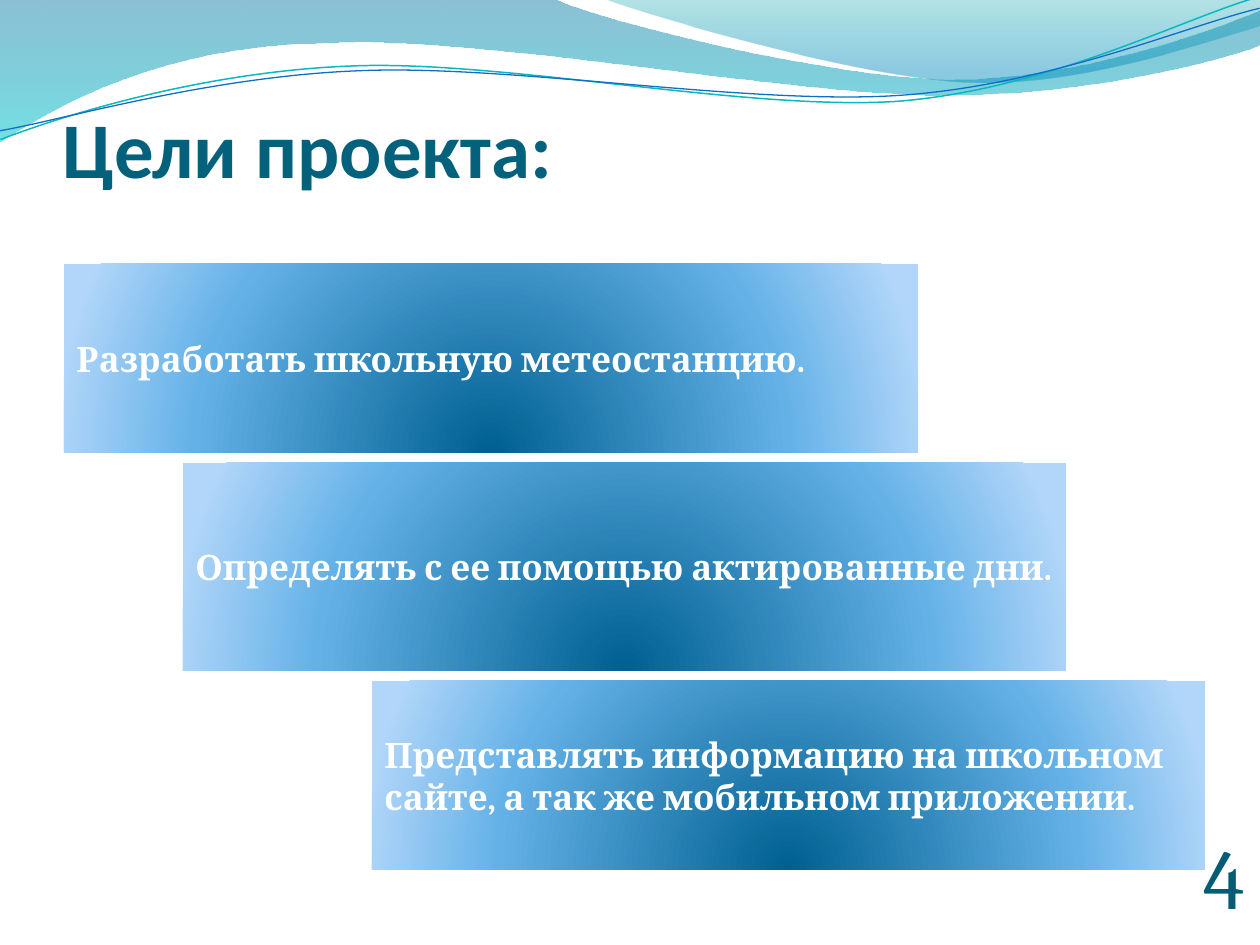
from dataclasses import dataclass
from typing import Optional

from lxml.etree import SubElement
from pptx import Presentation
from pptx.dml.color import RGBColor
from pptx.enum.shapes import MSO_SHAPE
from pptx.enum.text import MSO_ANCHOR, PP_ALIGN
from pptx.oxml.ns import qn
from pptx.util import Pt

PIXEL = 914400 / 126
LINE_TILT = -2.7
COLORS = {
    "title": "04617B", "number": "045D75", "text": "FFFFFF",
    "wave_top": "0074A1", "wave_bottom": "00C6CF",
    "crest_top": "00A1A9", "crest_bottom": "008BBF",
    "teal_line": "0AB8BF", "blue_line": "0F6FC6",
    "goal_core": "006091", "goal_middle": "64B1E7", "goal_edge": "B1D6F9",
}


@dataclass(frozen=True)
class Stop:
    """A gradient stop with position and opacity in percent."""
    position: int
    color: str
    opacity: int = 100


@dataclass(frozen=True)
class Curve:
    """An outline whose two-value steps are lines and six-value steps Bézier curves."""
    start: tuple[int, int]
    steps: tuple[tuple[int, ...], ...]
    stops: tuple[Stop, ...] = ()
    line: Optional[str] = None
    line_width: float = 0


@dataclass(frozen=True)
class Box:
    """A text and its rectangle in px."""
    text: str
    left: int
    top: int
    width: int
    height: int


@dataclass(frozen=True)
class Style:
    """The look of one text."""
    font: str
    size: int
    color: str
    bold: bool = True
    anchor: MSO_ANCHOR = MSO_ANCHOR.BOTTOM
    align: PP_ALIGN = PP_ALIGN.LEFT


CURVES = (
    Curve((0, 0), (
        (554, -1), (600, 21, 837, 79, 955, 79), (1075, 79, 1207, 33, 1260, 11),
        (1261, 45), (1239, 55, 1096, 96, 940, 95), (784, 95, 481, 35, 324, 43),
        (163, 45, 58, 105, -1, 142), (0, 0),
    ), (Stop(0, "wave_top", 45), Stop(100, "wave_bottom", 55))),
    Curve((604, -1), (
        (641, 14, 859, 78, 969, 82), (1079, 87, 1211, 40, 1260, 26), (1260, 0), (604, -1),
    ), (Stop(0, "crest_top", 30), Stop(80, "crest_bottom", 45))),
    Curve((-2, 110), (
        (58, 90, 199, 52, 350, 53), (499, 53, 745, 117, 896, 114),
        (1048, 109, 1184, 45, 1260, 27),
    ), line="teal_line", line_width=0.85),
    Curve((-2, 101), (
        (57, 94, 207, 57, 357, 58), (509, 58, 750, 112, 902, 108),
        (1052, 104, 1188, 52, 1262, 38),
    ), line="blue_line", line_width=0.75),
)
GOAL_STOPS = (Stop(0, "goal_core"), Stop(68, "goal_middle"), Stop(100, "goal_edge"))
GOALS = (
    Box("Разработать школьную метеостанцию.", 64, 264, 854, 189),
    Box("Определять с ее помощью актированные дни.", 183, 463, 883, 208),
    Box("Представлять информацию на школьном сайте, а так же мобильном приложении.",
        372, 681, 833, 189),
)
TITLE = Box("Цели проекта:", 63, 96, 1134, 98)
NUMBER = Box("4", 1140, 876, 105, 50)
GOAL_STYLE = Style("Cambria", 20, "text", anchor=MSO_ANCHOR.MIDDLE)
TITLE_STYLE = Style("Calibri", 45, "title")
NUMBER_STYLE = Style("Cambria", 48, "number", bold=False, align=PP_ALIGN.RIGHT)


def px(value: int) -> int:
    """Turn px into EMU."""
    return round(value * PIXEL)


def rgb(name: str) -> RGBColor:
    """Look up a named colour."""
    return RGBColor.from_string(COLORS[name])


def fill_gradient(shape, stops: tuple[Stop, ...], radial: bool = False) -> None:
    """Fill a shape with a vertical or radial gradient."""
    shape.fill.gradient()
    gradient = shape._element.spPr.find(qn("a:gradFill"))
    for child in list(gradient):
        gradient.remove(child)
    stop_list = SubElement(gradient, qn("a:gsLst"))
    for stop in stops:
        element = SubElement(stop_list, qn("a:gs"), pos=str(stop.position * 1000))
        color = SubElement(element, qn("a:srgbClr"), val=COLORS[stop.color])
        if stop.opacity < 100:
            SubElement(color, qn("a:alpha"), val=str(stop.opacity * 1000))
    if radial:
        circle = SubElement(gradient, qn("a:path"), path="circle")
        SubElement(circle, qn("a:fillToRect"), l="50000", t="130000", r="50000", b="-30000")
    else:
        SubElement(gradient, qn("a:lin"), ang="5400000", scaled="0")


def bend(shape, steps: tuple[tuple[int, ...], ...]) -> None:
    """Merge the segments of each six-value step into one Bézier curve."""
    outline = next(shape._element.iter(qn("a:path")))
    segments = iter(outline.findall(qn("a:lnTo")))
    for step in steps:
        first = next(segments)
        if len(step) == 6:
            first.tag = qn("a:cubicBezTo")
            for segment in (next(segments), next(segments)):
                first.append(segment[0])
                outline.remove(segment)


def draw_curve(slide, curve: Curve) -> None:
    """Draw a filled wave or a tilted open line."""
    builder = slide.shapes.build_freeform(*map(px, curve.start), scale=1.0)
    points = [(px(step[index]), px(step[index + 1]))
              for step in curve.steps for index in range(0, len(step), 2)]
    builder.add_line_segments(points, close=False)
    shape = builder.convert_to_shape()
    bend(shape, curve.steps)
    shape.shadow.inherit = False
    if curve.stops:
        fill_gradient(shape, curve.stops)
        shape.line.fill.background()
    else:
        shape.rotation = LINE_TILT
        shape.fill.background()
        shape.line.color.rgb = rgb(curve.line)
        shape.line.width = Pt(curve.line_width)


def write_text(shape, text: str, style: Style) -> None:
    """Write one styled run into a shape."""
    frame = shape.text_frame
    frame.word_wrap = True
    frame.vertical_anchor = style.anchor
    paragraph = frame.paragraphs[0]
    paragraph.alignment = style.align
    run = paragraph.add_run()
    run.text = text
    run.font.name = style.font
    run.font.size = Pt(style.size)
    run.font.bold = style.bold
    run.font.color.rgb = rgb(style.color)


def draw_label(slide, box: Box, style: Style, inset_top: int = 0) -> None:
    """Draw a text box without side insets."""
    shape = slide.shapes.add_textbox(*map(px, (box.left, box.top, box.width, box.height)))
    frame = shape.text_frame
    frame.margin_left = frame.margin_right = frame.margin_bottom = 0
    frame.margin_top = px(inset_top)
    write_text(shape, box.text, style)


def draw_goal(slide, box: Box) -> None:
    """Draw a goal rectangle with a radial gradient."""
    shape = slide.shapes.add_shape(
        MSO_SHAPE.RECTANGLE, *map(px, (box.left, box.top, box.width, box.height)))
    fill_gradient(shape, GOAL_STOPS, radial=True)
    shape.line.fill.background()
    shape.shadow.inherit = False
    write_text(shape, box.text, GOAL_STYLE)


def main() -> None:
    """Build and save the slide."""
    presentation = Presentation()
    presentation.slide_width, presentation.slide_height = px(1260), px(945)
    slide = presentation.slides.add_slide(presentation.slide_layouts[6])
    for curve in CURVES:
        draw_curve(slide, curve)
    draw_label(slide, TITLE, TITLE_STYLE, inset_top=6)
    for goal in GOALS:
        draw_goal(slide, goal)
    draw_label(slide, NUMBER, NUMBER_STYLE)
    presentation.save("out.pptx")


if __name__ == "__main__":
    main()
